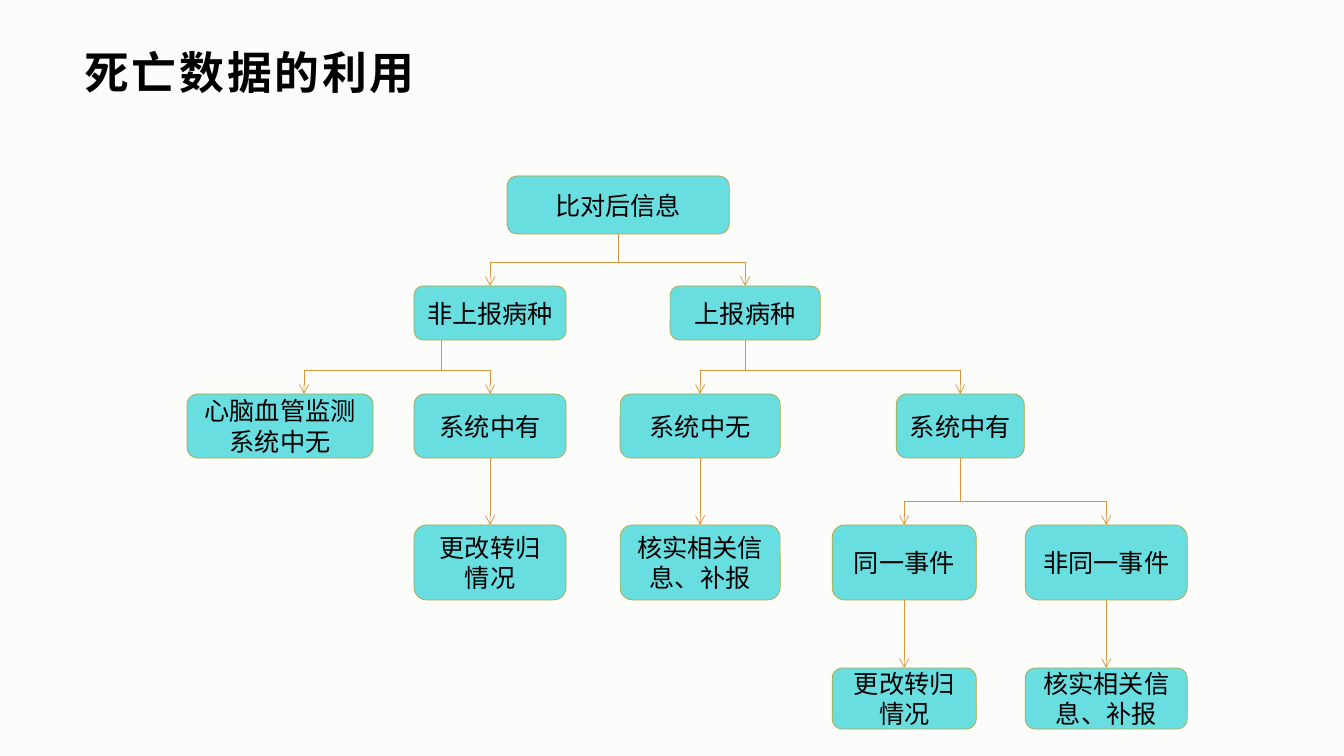
from dataclasses import dataclass

import lxml.etree
import pptx
import pptx.dml.color
import pptx.enum.shapes
import pptx.enum.text
import pptx.oxml.ns
import pptx.util

PX_PER_INCH = 100.8
TOP, BOTTOM = 0, 2
BAR_RISE = 24


@dataclass(frozen=True)
class Theme:
    background: str = "FCFCFB"
    box_fill: str = "69DEE1"
    box_line: str = "ABA745"
    arrow: str = "DA943E"
    text: str = "000000"
    title_font: str = "Noto Sans CJK SC"
    box_font: str = "Arial"
    title_size: int = 32
    box_size: int = 18
    line_width: float = 0.5


THEME = Theme()

# key: (text, left, top, width, height, side inset), in px
BOXES = {
    "root": ("比对后信息", 507, 176, 222, 58, 10),
    "unlisted": ("非上报病种", 414, 286, 152, 54, 10),
    "listed": ("上报病种", 670, 286, 150, 54, 10),
    "unlisted_absent": ("心脑血管监测系统中无", 187, 394, 186, 64, 10),
    "unlisted_present": ("系统中有", 414, 394, 152, 64, 10),
    "listed_absent": ("系统中无", 620, 394, 160, 64, 10),
    "listed_present": ("系统中有", 896, 394, 128, 64, 10),
    "update": ("更改转归情况", 414, 525, 152, 75, 15),
    "verify": ("核实相关信息、补报", 620, 525, 160, 75, 10),
    "same_event": ("同一事件", 832, 525, 144, 75, 10),
    "other_event": ("非同一事件", 1025, 525, 162, 75, 10),
    "same_update": ("更改转归情况", 832, 668, 144, 61, 15),
    "other_verify": ("核实相关信息、补报", 1025, 668, 162, 61, 10),
}

# parent, left child, right child, shift of the stem, shift of the left arrow
BRANCHES = [
    ("root", "unlisted", "listed", 0, 0),
    ("unlisted", "unlisted_absent", "unlisted_present", -49, 24),
    ("listed", "listed_absent", "listed_present", 0, 0),
    ("listed_present", "same_event", "other_event", 0, 0),
]

STEPS = [
    ("unlisted_present", "update"),
    ("listed_absent", "verify"),
    ("same_event", "same_update"),
    ("other_event", "other_verify"),
]


def px(n):
    return pptx.util.Emu(round(n * 914400 / PX_PER_INCH))


def rgb(value):
    return pptx.dml.color.RGBColor.from_string(value)


def add_run(p, text, font, size, bold=False):
    r = p.add_run()
    r.text = text
    r.font.name = font
    r.font.size = pptx.util.Pt(size)
    r.font.bold = bold
    r.font.color.rgb = rgb(THEME.text)
    return r


def set_title(slide, text):
    sp = slide.shapes.title
    sp.left, sp.top, sp.width, sp.height = px(74), px(48), px(1196), px(48)
    tf = sp.text_frame
    tf.word_wrap = True
    tf.auto_size = pptx.enum.text.MSO_AUTO_SIZE.NONE
    tf.vertical_anchor = pptx.enum.text.MSO_ANCHOR.MIDDLE
    p = tf.paragraphs[0]
    p.alignment = pptx.enum.text.PP_ALIGN.LEFT
    r = add_run(p, text, THEME.title_font, THEME.title_size, True)
    props = r.font._element
    props.set("spc", "200")
    ea = lxml.etree.SubElement(props, pptx.oxml.ns.qn("a:ea"))
    ea.set("typeface", THEME.title_font)


def add_box(slide, text, left, top, width, height, inset):
    sp = slide.shapes.add_shape(
        pptx.enum.shapes.MSO_SHAPE.ROUNDED_RECTANGLE,
        px(left), px(top), px(width), px(height))
    sp.shadow.inherit = False
    sp.fill.solid()
    sp.fill.fore_color.rgb = rgb(THEME.box_fill)
    sp.line.color.rgb = rgb(THEME.box_line)
    sp.line.width = pptx.util.Pt(THEME.line_width)
    tf = sp.text_frame
    tf.word_wrap = True
    tf.vertical_anchor = pptx.enum.text.MSO_ANCHOR.MIDDLE
    tf.margin_left = tf.margin_right = px(inset)
    tf.margin_top = tf.margin_bottom = 0
    p = tf.paragraphs[0]
    p.alignment = pptx.enum.text.PP_ALIGN.CENTER
    add_run(p, text, THEME.box_font, THEME.box_size)
    return sp


def add_line(slide, x1, y1, x2, y2, arrow=False):
    line = slide.shapes.add_connector(
        pptx.enum.shapes.MSO_CONNECTOR.STRAIGHT, x1, y1, x2, y2)
    line.line.color.rgb = rgb(THEME.arrow)
    line.line.width = pptx.util.Pt(THEME.line_width)
    if arrow:
        tail = lxml.etree.SubElement(
            line.line._get_or_add_ln(), pptx.oxml.ns.qn("a:tailEnd"))
        tail.set("type", "arrow")
    lxml.etree.SubElement(
        line._element.spPr, pptx.oxml.ns.qn("a:effectLst"))
    return line


def center_x(sp):
    return sp.left + sp.width // 2


def add_branch(slide, parent, left, right, stem_shift, left_shift):
    """Draw a stem, a crossbar and an arrow down to each child.

    A shifted line leaves the middle of its box side and stays unjoined.
    """
    bar_y = left.top - px(BAR_RISE)
    stem_x = center_x(parent) + px(stem_shift)
    left_x = center_x(left) + px(left_shift)
    right_x = center_x(right)
    stem = add_line(slide, stem_x, parent.top + parent.height, stem_x, bar_y)
    if not stem_shift:
        stem.begin_connect(parent, BOTTOM)
    add_line(slide, left_x, bar_y, right_x, bar_y)
    for child, x, shift in ((left, left_x, left_shift), (right, right_x, 0)):
        drop = add_line(slide, x, bar_y, x, child.top, arrow=True)
        if not shift:
            drop.end_connect(child, TOP)


def add_step(slide, upper, lower):
    x = center_x(upper)
    line = add_line(
        slide, x, upper.top + upper.height, x, lower.top, arrow=True)
    line.begin_connect(upper, BOTTOM)
    line.end_connect(lower, TOP)


def main():
    prs = pptx.Presentation()
    prs.slide_width = pptx.util.Inches(13.33)
    prs.slide_height = pptx.util.Inches(7.5)
    slide = prs.slides.add_slide(prs.slide_layouts[5])
    slide.background.fill.solid()
    slide.background.fill.fore_color.rgb = rgb(THEME.background)
    set_title(slide, "死亡数据的利用")
    boxes = {key: add_box(slide, *box) for key, box in BOXES.items()}
    for parent, left, right, stem_shift, left_shift in BRANCHES:
        add_branch(slide, boxes[parent], boxes[left], boxes[right],
                   stem_shift, left_shift)
    for upper, lower in STEPS:
        add_step(slide, boxes[upper], boxes[lower])
    prs.save("out.pptx")


if __name__ == "__main__":
    main()
